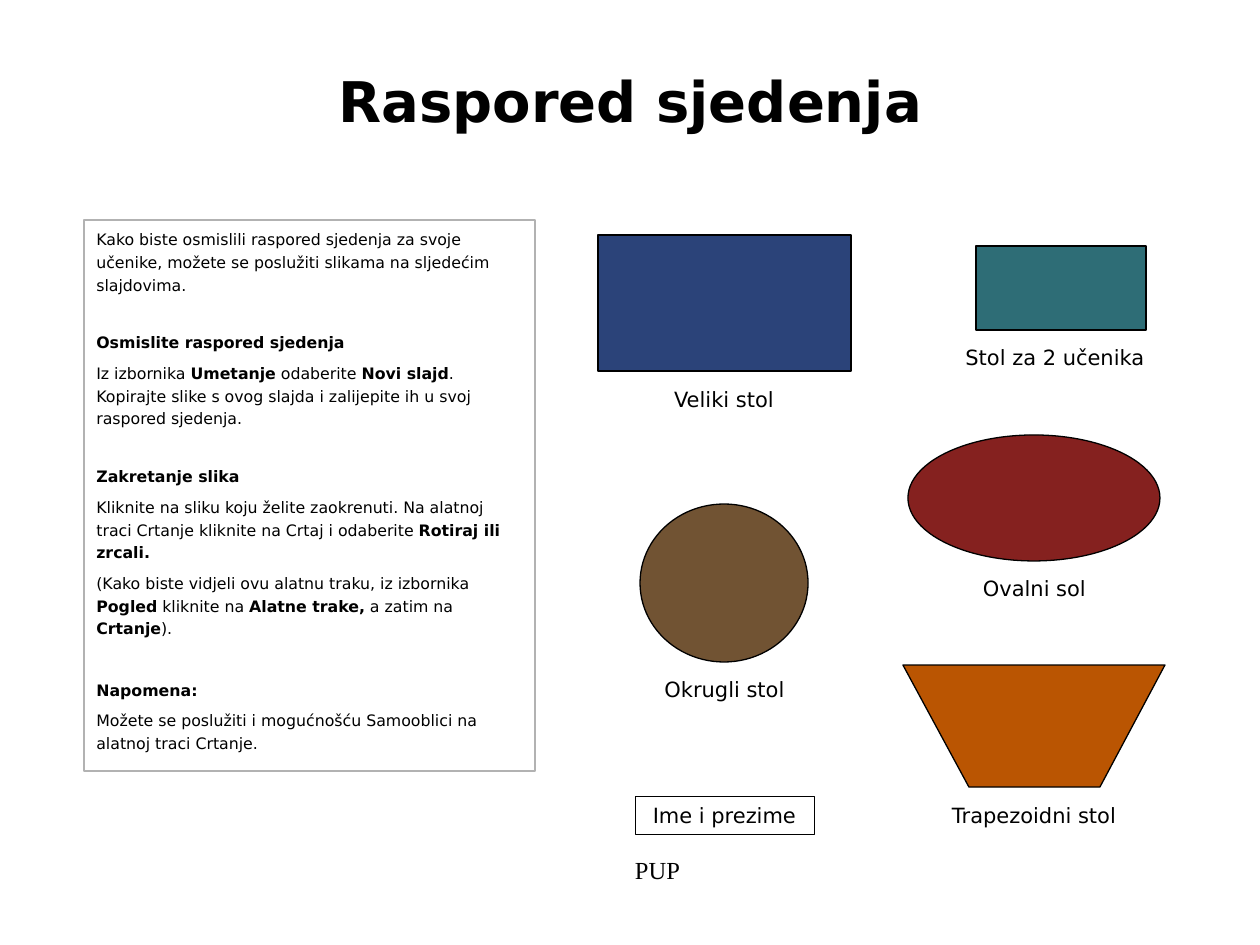
"""Build the seating plan slide with table shapes and instructions."""
from pptx import Presentation
from pptx.dml.color import RGBColor
from pptx.enum.shapes import MSO_SHAPE as Shape
from pptx.enum.text import MSO_ANCHOR as Anchor, PP_ALIGN as Align
from pptx.util import Pt

PX = 914400 / 126
BLACK = RGBColor(0x00, 0x00, 0x00)
WHITE = RGBColor(0xFF, 0xFF, 0xFF)
GREY = RGBColor(0xB2, 0xB2, 0xB2)
NAVY = RGBColor(0x2B, 0x43, 0x79)
TEAL = RGBColor(0x2E, 0x6D, 0x76)
RED = RGBColor(0x85, 0x21, 0x1F)
BROWN = RGBColor(0x71, 0x53, 0x33)
ORANGE = RGBColor(0xBA, 0x55, 0x02)


def px(*lengths):
    return [round(length * PX) for length in lengths]


def style(span, size, bold=False, name="DejaVu Sans"):
    span.font.name = name
    span.font.size = Pt(size)
    span.font.bold = bold
    span.font.color.rgb = BLACK


deck = Presentation()
deck.slide_width, deck.slide_height = px(1260, 945)
page = deck.slides.add_slide(deck.slide_layouts[5])

title = page.shapes.title
title.left, title.top, title.width, title.height = px(53, 53, 1155, 95)
title.text_frame.text = "Raspored sjedenja"
title.text_frame.vertical_anchor = Anchor.MIDDLE
title.text_frame.paragraphs[0].alignment = Align.CENTER
style(title.text_frame.paragraphs[0].runs[0], 32, True)

tables = [
    (Shape.RECTANGLE, NAVY, 598, 235, 253, 136),
    (Shape.RECTANGLE, TEAL, 976, 246, 170, 84),
    (Shape.OVAL, RED, 908, 435, 252, 126),
    (Shape.OVAL, BROWN, 640, 504, 168, 158),
]
for kind, color, *place in tables:
    table = page.shapes.add_shape(kind, *px(*place))
    table.shadow.inherit = False
    table.fill.solid()
    table.fill.fore_color.rgb = color
    table.line.color.rgb = BLACK
    table.line.width = Pt(0.75)

outline = page.shapes.build_freeform(903, 665, scale=PX)
outline.add_line_segments([(969, 787), (1100, 787), (1165, 665)])
trapezoid = outline.convert_to_shape()
trapezoid.shadow.inherit = False
trapezoid.fill.solid()
trapezoid.fill.fore_color.rgb = ORANGE
trapezoid.line.color.rgb = BLACK
trapezoid.line.width = Pt(0.75)

name_card = page.shapes.add_shape(Shape.RECTANGLE, *px(635, 796, 179, 38))
name_card.shadow.inherit = False
name_card.fill.solid()
name_card.fill.fore_color.rgb = WHITE
name_card.line.color.rgb = BLACK
name_card.line.width = Pt(0.25)

labels = [
    ("Veliki stol", 598, 380, 252),
    ("Stol za 2 učenika", 945, 338, 220),
    ("Ovalni sol", 945, 569, 179),
    ("Okrugli stol", 635, 670, 179),
    ("Trapezoidni stol", 924, 796, 220),
]
captions = [(name_card, "Ime i prezime", 12, "DejaVu Sans")]
for text, left, top, width in labels:
    box = page.shapes.add_textbox(*px(left, top, width, 38))
    captions.append((box, text, 12, "DejaVu Sans"))
footer = page.shapes.add_textbox(*px(432, 849, 451, 63))
captions.append((footer, "PUP", 14, "Times New Roman"))
for box, text, size, font_name in captions:
    box.text_frame.word_wrap = True
    box.text_frame.vertical_anchor = Anchor.TOP
    box.text_frame.text = text
    box.text_frame.paragraphs[0].alignment = Align.CENTER
    style(box.text_frame.paragraphs[0].runs[0], size, name=font_name)

instructions = [
    (0, [("Kako biste osmislili raspored sjedenja za svoje učenike, možete se "
          "poslužiti slikama na sljedećim slajdovima.", False)]),
    (20, [("Osmislite raspored sjedenja", True)]),
    (4.5, [("Iz izbornika ", False), ("Umetanje", True), (" odaberite ", False),
           ("Novi slajd", True),
           (". Kopirajte slike s ovog slajda i zalijepite ih u svoj raspored "
            "sjedenja.", False)]),
    (20, [("Zakretanje slika", True)]),
    (4.5, [("Kliknite na sliku koju želite zaokrenuti. Na alatnoj traci Crtanje "
            "kliknite na Crtaj i odaberite ", False),
           ("Rotiraj ili zrcali.", True)]),
    (4.5, [("(Kako biste vidjeli ovu alatnu traku, iz izbornika ", False),
           ("Pogled", True), (" kliknite na ", False), ("Alatne trake,", True),
           (" a zatim na ", False), ("Crtanje", True), (").", False)]),
    (22, [("Napomena:", True)]),
    (4.5, [("Možete se poslužiti i mogućnošću Samooblici na alatnoj traci "
            "Crtanje.", False)]),
]
panel = page.shapes.add_textbox(*px(84, 220, 451, 551))
panel.line.color.rgb = GREY
panel.line.width = Pt(0.75)
frame = panel.text_frame
frame.word_wrap = True
for index, (gap, spans) in enumerate(instructions):
    para = frame.add_paragraph() if index else frame.paragraphs[0]
    para.line_spacing = 1.2
    if gap:
        para.space_before = Pt(gap)
    for text, bold in spans:
        span = para.add_run()
        span.text = text
        style(span, 9, bold)

deck.save("out.pptx")
